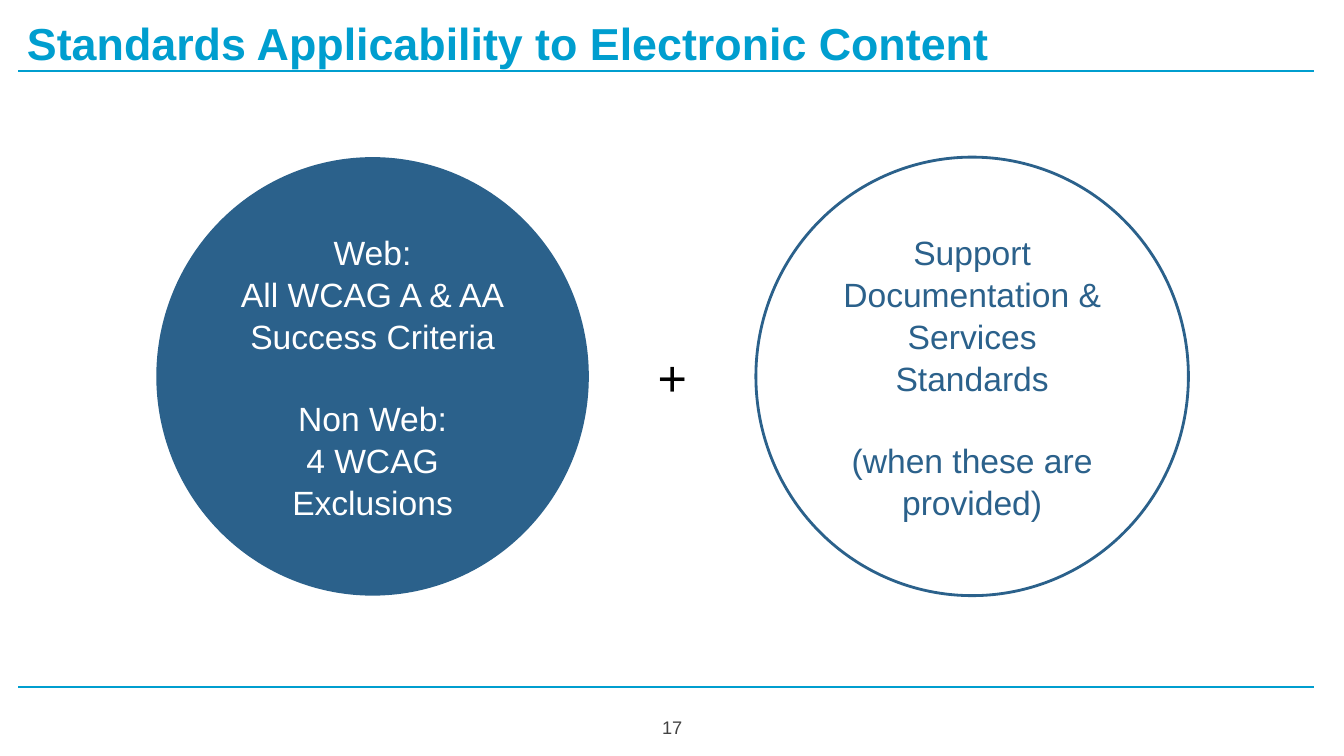
from pptx import Presentation
from pptx import util as u
from pptx.dml import color
from pptx.enum import shapes, text
from pptx.oxml import xmlchemy as x

Cm, Pt = u.Cm, u.Pt
FONT = "Arial"
COLORS = {"accent": "009ECF", "navy": "2B618B", "white": "FFFFFF",
          "black": "000000", "number": "434343"}


def rgb(name):
    """Return the palette colour called name."""
    return color.RGBColor.from_string(COLORS[name])


def write(tf, blocks, size=24, ink="black", bold=False, align=text.PP_ALIGN.CENTER,
          anchor=text.MSO_ANCHOR.MIDDLE, spacing=1.0, gap=0, inset=(0.25, 0.25)):
    """Write blocks of lines into a text frame, with a gap between blocks."""
    tf.word_wrap = True
    tf.auto_size = text.MSO_AUTO_SIZE.NONE
    tf.vertical_anchor = anchor
    tf.margin_left = tf.margin_right = Cm(inset[0])
    tf.margin_top = tf.margin_bottom = Cm(inset[1])
    p = None
    for i, block in enumerate(blocks):
        for j, line in enumerate(block):
            p = tf.add_paragraph() if p is not None else tf.paragraphs[0]
            p.alignment = align
            p.line_spacing = spacing
            p.space_before = Pt(gap if i and not j else 0)
            r = p.add_run()
            r.text = line
            r.font.name, r.font.size, r.font.bold = FONT, Pt(size), bold
            r.font.color.rgb = rgb(ink)


def add_rule(s, left, right, y):
    """Draw a horizontal accent rule."""
    c = s.shapes.add_connector(shapes.MSO_CONNECTOR.STRAIGHT,
                               Cm(left), Cm(y), Cm(right), Cm(y))
    c.line.color.rgb = rgb("accent")
    c.line.width = Pt(1.5)
    c._element.spPr.append(x.OxmlElement("a:effectLst"))


def add_label(s, left, top, width, height, label, **fmt):
    """Add a one-line text box."""
    sp = s.shapes.add_textbox(Cm(left), Cm(top), Cm(width), Cm(height))
    write(sp.text_frame, [[label]], **fmt)


def add_circle(s, left, top, width, height, blocks, fill, ink, outline=None):
    """Add a circle holding blocks of centred text."""
    sp = s.shapes.add_shape(shapes.MSO_SHAPE.OVAL, Cm(left), Cm(top), Cm(width), Cm(height))
    sp.shadow.inherit = False
    sp.fill.solid()
    sp.fill.fore_color.rgb = rgb(fill)
    if outline:
        sp.line.color.rgb = rgb(outline)
        sp.line.width = Pt(2)
    else:
        sp.line.fill.background()
    write(sp.text_frame, blocks, ink=ink, spacing=1.04, gap=28.7, inset=(0.25, 0.13))


def add_header(s, left, top, width, height, title):
    """Place and format the slide title."""
    sp = s.shapes.title
    sp.left, sp.top, sp.width, sp.height = Cm(left), Cm(top), Cm(width), Cm(height)
    write(sp.text_frame, [[title]], size=32, ink="accent", bold=True,
          align=text.PP_ALIGN.LEFT, anchor=text.MSO_ANCHOR.TOP, inset=(0.25, 0.35))


def add_sum(s, left, top, width, height):
    """Place two circles at the ends of the box and a plus between them."""
    dia = 10.9
    add_circle(s, left, top, dia, height,
               [["Web:", "All WCAG A & AA", "Success Criteria"],
                ["Non Web:", "4 WCAG Exclusions"]], fill="navy", ink="white")
    add_circle(s, left + width - dia, top, dia, height,
               [["Support Documentation & Services Standards"],
                ["(when these are provided)"]], fill="white", ink="navy", outline="navy")
    plus_w, plus_h = 2.4, 1.8
    add_label(s, left + (width - plus_w) / 2, top + (height - plus_h) / 2,
              plus_w, plus_h, "+", size=36, inset=(0.25, 0.13))


def main():
    """Build the slide and save it."""
    prs = Presentation()
    prs.slide_width, prs.slide_height = Cm(33.87), Cm(19.05)
    s = prs.slides.add_slide(prs.slide_layouts[5])
    for y in (1.78, 17.32):
        add_rule(s, 0.46, 33.12, y)
    add_header(s, 0.43, 0.05, 24.84, 1.78, "Standards Applicability to Electronic Content")
    add_label(s, 16.18, 17.6, 1.52, 1.45, "17", size=13, ink="number")
    add_sum(s, 3.94, 3.96, 26.01, 11.05)
    prs.save("out.pptx")


if __name__ == "__main__":
    main()
